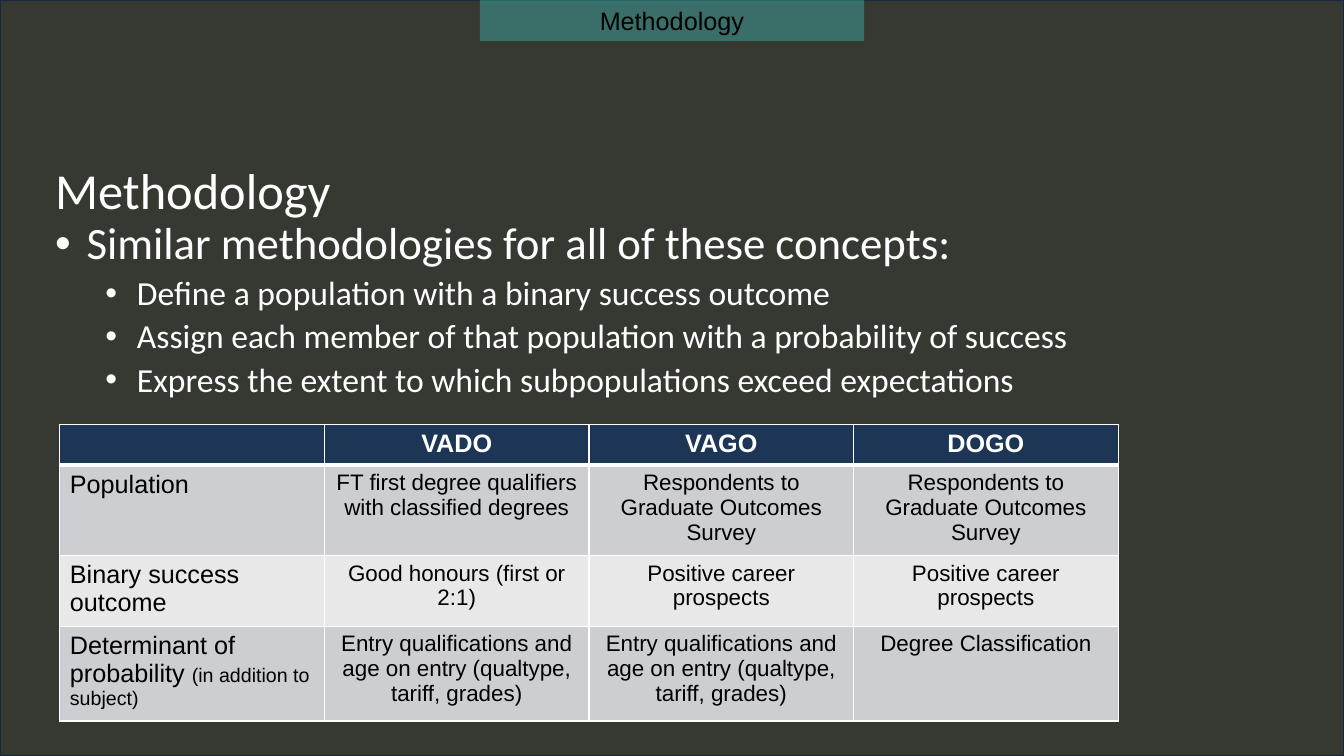
from dataclasses import dataclass

from lxml.etree import SubElement
from pptx import Presentation
from pptx.dml.color import RGBColor
from pptx.enum.shapes import MSO_SHAPE
from pptx.enum.text import MSO_ANCHOR, PP_ALIGN
from pptx.oxml.ns import qn
from pptx.util import Emu, Pt

COLORS = {
    "background": "363932",
    "outline": "152840",
    "banner": "3EA5A0",
    "header": "1D3656",
    "band_dark": "CDCED1",
    "band_light": "E8E8E9",
    "white": "FFFFFF",
    "black": "000000",
}
EMU_PER_PX = 9525
SLIDE_W, SLIDE_H = 1280, 720
COLUMN_W = 252


@dataclass(frozen=True)
class Run:
    text: str
    size: int
    color: str = "black"
    font: str = "Arial"
    bold: bool = False


@dataclass(frozen=True)
class Line:
    run: Run
    level: int = 0
    margin: int = 0
    before: int = 0
    bullet: bool = False


@dataclass(frozen=True)
class Row:
    height: int
    fill: str
    label: tuple[Run, ...]
    values: tuple[str, ...]
    value_size: int = 16
    value_color: str = "black"
    bold: bool = False
    rule: int = 1


def px(n: int) -> Emu:
    return Emu(n * EMU_PER_PX)


def rgb(name: str) -> RGBColor:
    return RGBColor.from_string(COLORS[name])


def add_run(p, run: Run) -> None:
    r = p.add_run()
    r.text = run.text
    r.font.size = Pt(run.size)
    r.font.name = run.font
    r.font.bold = run.bold
    r.font.color.rgb = rgb(run.color)


def add_rect(slide, x: int, y: int, w: int, h: int, fill: str):
    sp = slide.shapes.add_shape(MSO_SHAPE.RECTANGLE, px(x), px(y), px(w), px(h))
    sp.shadow.inherit = False
    sp.fill.solid()
    sp.fill.fore_color.rgb = rgb(fill)
    return sp


def add_text(slide, x: int, y: int, w: int, h: int, lines: list[Line]) -> None:
    tf = slide.shapes.add_textbox(px(x), px(y), px(w), px(h)).text_frame
    tf.word_wrap = True
    for i, line in enumerate(lines):
        p = tf.add_paragraph() if i else tf.paragraphs[0]
        p.level = line.level
        if line.bullet:
            pPr = p._p.get_or_add_pPr()
            pPr.set("marL", str(px(line.margin)))
            pPr.set("indent", str(px(-30)))
            SubElement(pPr, qn("a:buFont"), typeface="Arial")
            SubElement(pPr, qn("a:buChar"), char="•")
        p.line_spacing = 0.9
        p.space_before = Pt(line.before)
        add_run(p, line.run)


def style_cell(cell, fill: str, rule: int, rule_above: int) -> None:
    tcPr = cell._tc.get_or_add_tcPr()
    widths = {"a:lnL": 1, "a:lnR": 1, "a:lnT": rule_above, "a:lnB": rule}
    for tag, width in widths.items():
        ln = SubElement(tcPr, qn(tag), w=str(Pt(width)))
        solid = SubElement(ln, qn("a:solidFill"))
        SubElement(solid, qn("a:srgbClr"), val=COLORS["white"])
    cell.fill.solid()
    cell.fill.fore_color.rgb = rgb(fill)


def add_comparison(slide, x: int, y: int, rows: list[Row]) -> None:
    columns = 1 + len(rows[0].values)
    height = sum(row.height for row in rows)
    table = slide.shapes.add_table(
        len(rows), columns, px(x), px(y), px(COLUMN_W * columns), px(height)
    ).table
    table.horz_banding = False
    for column in table.columns:
        column.width = px(COLUMN_W)
    rule_above = 1
    for i, row in enumerate(rows):
        table.rows[i].height = px(row.height)
        values = [
            (Run(v, row.value_size, row.value_color, bold=row.bold),)
            for v in row.values
        ]
        for j, runs in enumerate([row.label, *values]):
            cell = table.cell(i, j)
            style_cell(cell, row.fill, row.rule, rule_above)
            p = cell.text_frame.paragraphs[0]
            p.alignment = PP_ALIGN.CENTER if j else PP_ALIGN.LEFT
            for run in runs:
                add_run(p, run)
        rule_above = row.rule


def add_banner(slide) -> None:
    sp = add_rect(slide, 457, 0, 366, 39, "banner")
    sp.line.fill.background()
    color = sp.fill._xPr.find(qn("a:solidFill")).find(qn("a:srgbClr"))
    SubElement(color, qn("a:alpha"), val="50000")
    tf = sp.text_frame
    tf.word_wrap = True
    tf.vertical_anchor = MSO_ANCHOR.MIDDLE
    p = tf.paragraphs[0]
    p.alignment = PP_ALIGN.CENTER
    add_run(p, Run("Methodology", 18))


STEPS = [
    "Define a population with a binary success outcome",
    "Assign each member of that population with a probability of success",
    "Express the extent to which subpopulations exceed expectations",
]
SURVEY = "Respondents to Graduate Outcomes Survey"
PROSPECTS = "Positive career prospects"
ENTRY = "Entry qualifications and age on entry (qualtype, tariff, grades)"
ROWS = [
    Row(39, "header", (), ("VADO", "VAGO", "DOGO"), 18, "white", True, 3),
    Row(86, "band_dark", (Run("Population", 18),),
        ("FT first degree qualifiers with classified degrees", SURVEY, SURVEY)),
    Row(67, "band_light", (Run("Binary success outcome", 18),),
        ("Good honours (first or 2:1)", PROSPECTS, PROSPECTS)),
    Row(90, "band_dark",
        (Run("Determinant of probability ", 18), Run("(in addition to subject)", 14)),
        (ENTRY, ENTRY, "Degree Classification")),
]


def main() -> None:
    prs = Presentation()
    prs.slide_width, prs.slide_height = px(SLIDE_W), px(SLIDE_H)
    slide = prs.slides.add_slide(prs.slide_layouts[6])
    backdrop = add_rect(slide, 0, 0, SLIDE_W, SLIDE_H, "background")
    backdrop.line.color.rgb = rgb("outline")
    backdrop.line.width = Pt(1)
    intro = Run("Similar methodologies for all of these concepts:", 32, "white", "Calibri")
    steps = [Line(Run(s, 24, "white", "Calibri"), 1, 78, 5, True) for s in STEPS]
    add_text(slide, 43, 206, 1194, 470, [Line(intro, margin=30, bullet=True), *steps])
    add_text(slide, 43, 153, 1194, 55, [Line(Run("Methodology", 36, "white", "Calibri"))])
    add_banner(slide)
    add_comparison(slide, 57, 404, ROWS)
    prs.save("out.pptx")


if __name__ == "__main__":
    main()
